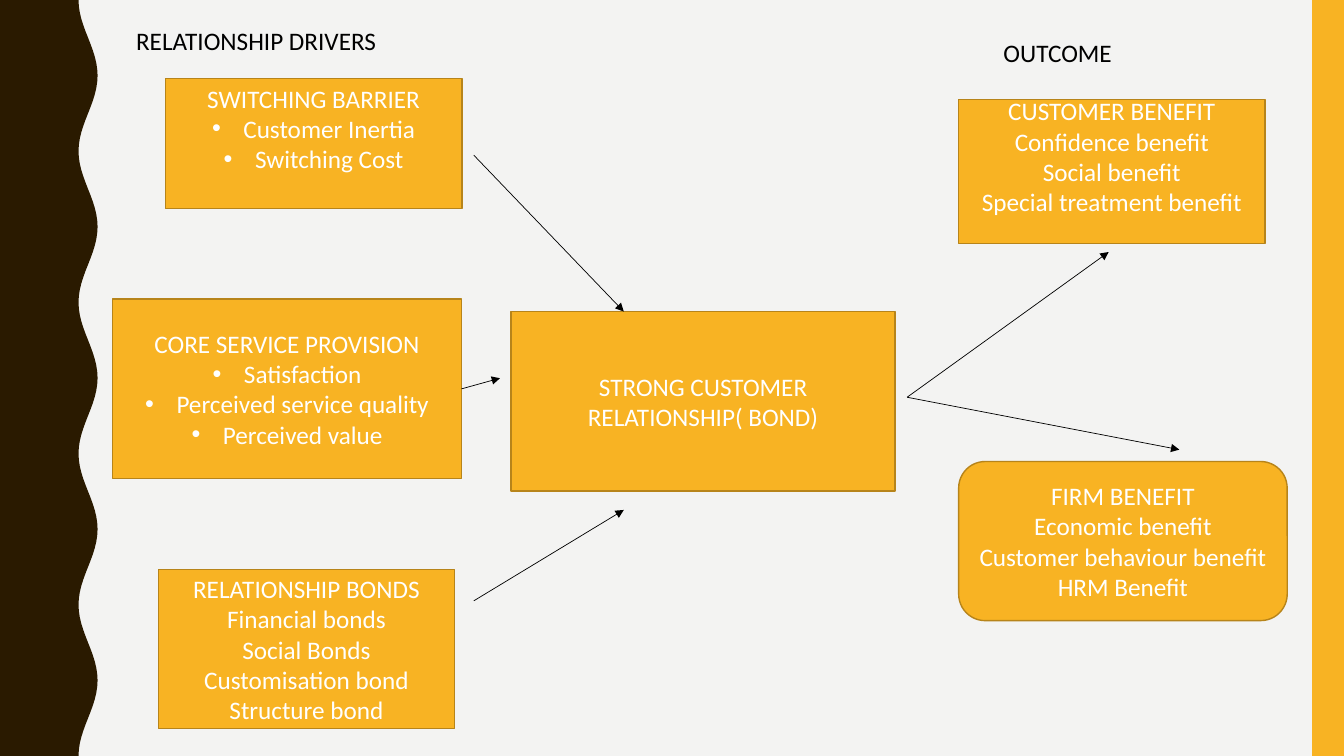
from math import cos, pi

from lxml.etree import SubElement
from pptx import Presentation
from pptx.dml.color import RGBColor
from pptx.enum.shapes import MSO_CONNECTOR, MSO_SHAPE
from pptx.enum.text import MSO_ANCHOR, PP_ALIGN
from pptx.oxml.ns import qn
from pptx.util import Cm, Pt

PAPER = RGBColor(0xF3, 0xF3, 0xF2)
BROWN = RGBColor(0x2A, 0x1A, 0x00)
GOLD = RGBColor(0xF8, 0xB3, 0x23)
EDGE = RGBColor(0xB7, 0x84, 0x1A)
WHITE = RGBColor(0xFF, 0xFF, 0xFF)
BLACK = RGBColor(0x00, 0x00, 0x00)
WIDE, HIGH = 33.87, 19.05
BULLET = "• "


def write(frame, lines, color=BLACK, align=PP_ALIGN.LEFT, anchor=MSO_ANCHOR.TOP,
          foot=0.13, font="Calibri", size=18):
    """Fill a text frame; lines that start with BULLET become list items."""
    frame.word_wrap = True
    frame.vertical_anchor = anchor
    frame.margin_bottom = Cm(foot)
    for i, line in enumerate(lines):
        para = frame.paragraphs[0] if i == 0 else frame.add_paragraph()
        para.alignment = align
        if line.startswith(BULLET):
            props = para._p.get_or_add_pPr()
            props.set("marL", str(Cm(0.79)))
            props.set("indent", str(Cm(-0.79)))
            SubElement(props, qn("a:buFont")).set("typeface", "Arial")
            SubElement(props, qn("a:buChar")).set("char", BULLET.strip())
        run = para.add_run()
        run.text = line.removeprefix(BULLET)
        run.font.name, run.font.size = font, Pt(size)
        run.font.color.rgb = color


def paint(shape, fill, edge=None):
    shape.shadow.inherit = False
    shape.fill.solid()
    shape.fill.fore_color.rgb = fill
    if edge is None:
        shape.line.fill.background()
    else:
        shape.line.color.rgb = edge
        shape.line.width = Pt(1)


def card(slide, x, y, w, h, lines, kind=MSO_SHAPE.RECTANGLE, foot=0.13):
    shape = slide.shapes.add_shape(kind, Cm(x), Cm(y), Cm(w), Cm(h))
    paint(shape, GOLD, EDGE)
    write(shape.text_frame, lines, color=WHITE, align=PP_ALIGN.CENTER,
          anchor=MSO_ANCHOR.MIDDLE, foot=foot)


def label(slide, x, y, w, text):
    box = slide.shapes.add_textbox(Cm(x), Cm(y), Cm(w), Cm(1.02))
    write(box.text_frame, [text])


def arrow(slide, x1, y1, x2, y2):
    line = slide.shapes.add_connector(
        MSO_CONNECTOR.STRAIGHT, Cm(x1), Cm(y1), Cm(x2), Cm(y2))
    line.line.color.rgb = BLACK
    line.line.width = Pt(0.5)
    SubElement(line.line._get_or_add_ln(), qn("a:tailEnd")).set("type", "triangle")
    SubElement(line._element.spPr, qn("a:effectLst"))


def frame(slide, w, h):
    """Draw the background, the wavy left edge and the right bar."""
    slide.background.fill.solid()
    slide.background.fill.fore_color.rgb = PAPER
    waves, steps = 5, 24
    count = waves * steps
    edge = [(Cm(2.22 - 0.24 * cos(2 * pi * i / steps)), Cm(h * i / count))
            for i in range(count + 1)]
    pen = slide.shapes.build_freeform(0, 0)
    pen.add_line_segments(edge + [(0, Cm(h))], close=True)
    paint(pen.convert_to_shape(), BROWN)
    bar = slide.shapes.add_shape(
        MSO_SHAPE.RECTANGLE, Cm(w - 0.8), 0, Cm(0.8), Cm(h))
    paint(bar, GOLD)


def drivers(slide, x, y):
    label(slide, x + 0.34, y, 8.76, "RELATIONSHIP DRIVERS")
    card(slide, x + 1.33, y + 1.47, 7.47, 3.28,
         ["SWITCHING BARRIER", "• Customer Inertia", "• Switching Cost"], foot=0.9)
    card(slide, x, y + 7.03, 8.79, 4.52,
         ["CORE SERVICE PROVISION", "• Satisfaction",
          "• Perceived service quality", "• Perceived value"])
    card(slide, x + 1.15, y + 13.84, 7.47, 4.01,
         ["RELATIONSHIP BONDS", "Financial bonds", "Social Bonds",
          "Customisation bond", "Structure bond"])


def hub(slide, x, y, w, h):
    """Draw the central bond with the arrows into and out of it."""
    card(slide, x, y, w, h, ["STRONG CUSTOMER RELATIONSHIP( BOND)"])
    arrow(slide, x - 0.94, y - 3.94, x + 2.84, y)
    arrow(slide, x - 0.94, y + h + 2.77, x + 2.84, y + h + 0.48)
    arrow(slide, x - 1.25, y + 1.95, x - 0.28, y + 1.68)
    for dx, dy in ((5.08, -3.66), (6.86, 1.32)):
        fork_x, fork_y = x + w + 0.3, y + 2.16
        arrow(slide, fork_x, fork_y, fork_x + dx, fork_y + dy)


def outcome(slide, x, y):
    label(slide, x + 0.88, y, 5.66, "OUTCOME")
    card(slide, x, y + 1.7, 7.72, 3.63,
         ["CUSTOMER BENEFIT", "Confidence benefit", "Social benefit",
          "Special treatment benefit"], foot=0.9)
    card(slide, x, y + 10.82, 8.28, 4.01,
         ["FIRM BENEFIT", "Economic benefit", "Customer behaviour benefit",
          "HRM Benefit"], kind=MSO_SHAPE.ROUNDED_RECTANGLE)


def main():
    deck = Presentation()
    deck.slide_width, deck.slide_height = Cm(WIDE), Cm(HIGH)
    slide = deck.slides.add_slide(deck.slide_layouts[6])
    frame(slide, WIDE, HIGH)
    drivers(slide, 2.84, 0.51)
    hub(slide, 12.88, 7.85, 9.68, 4.52)
    outcome(slide, 24.16, 0.81)
    deck.save("out.pptx")


if __name__ == "__main__":
    main()
